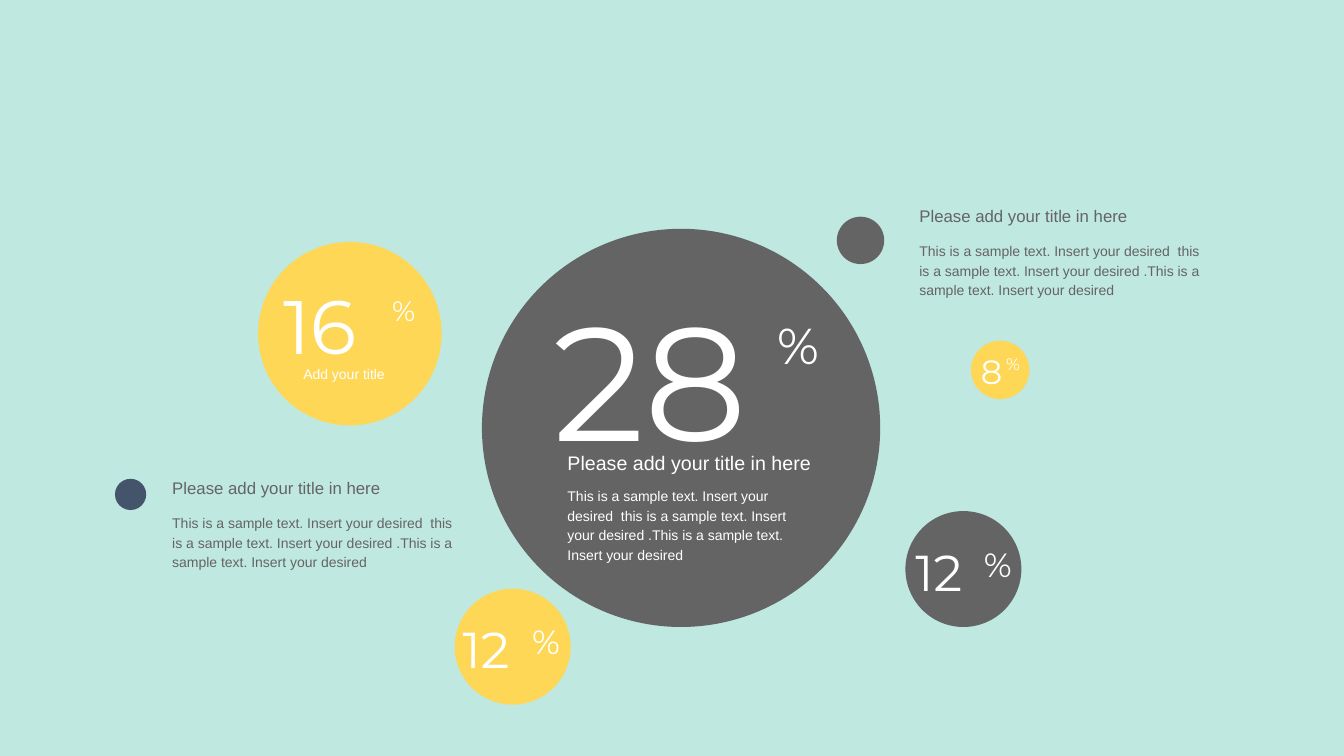
"""Build a slide of percentage bubbles with short text notes."""
from dataclasses import dataclass

from pptx import Presentation
from pptx import util as u
from pptx.dml.color import RGBColor
from pptx.enum import shapes, text

SCALE = 9144


@dataclass(frozen=True)
class Theme:
    mint: str = "BFE8E0"
    grey: str = "646464"
    gold: str = "FED756"
    navy: str = "44546A"
    white: str = "FFFFFF"
    digits: str = "Montserrat"
    prose: str = "Arial"
    huge: int = 115
    large: int = 54
    medium: int = 36
    small: int = 24
    sign: int = 20
    tiny: int = 12
    lead: int = 14
    head: int = 12
    body: int = 10
    leading: int = 14


@dataclass(frozen=True)
class Bubble:
    left: int
    top: int
    size: int
    color: str


@dataclass(frozen=True)
class Label:
    words: str
    left: int
    top: int
    width: int
    height: int
    size: int
    font: str
    color: str
    wrap: bool = False


@dataclass(frozen=True)
class Note:
    left: int
    top: int
    head_width: int
    head_height: int
    body_width: int
    body_height: int
    size: int
    color: str


T = Theme()
TITLE = "Please add your title in here"
SAMPLE = ("This is a sample text. Insert your desired  this is a sample text. "
          "Insert your desired .This is a sample text. Insert your desired")
DROP = 34

BUBBLES = [
    Bubble(898, 507, 115, T.grey),
    Bubble(478, 227, 395, T.grey),
    Bubble(451, 584, 115, T.gold),
    Bubble(256, 240, 182, T.gold),
    Bubble(963, 338, 58, T.gold),
    Bubble(830, 215, 47, T.grey),
    Bubble(114, 475, 31, T.navy),
]

LABELS = [
    Label("28", 539, 273, 235, 204, T.huge, T.digits, T.white),
    Label("%", 761, 307, 71, 71, T.medium, T.digits, T.white),
    Label("16", 271, 272, 121, 101, T.large, T.digits, T.white),
    Label("%", 379, 286, 48, 44, T.sign, T.digits, T.white),
    Label("Add your title", 291, 358, 105, 27, T.body, T.prose, T.white),
    Label("12", 449, 608, 88, 71, T.medium, T.digits, T.white),
    Label("%", 518, 611, 54, 50, T.small, T.digits, T.white),
    Label("12", 898, 532, 88, 71, T.medium, T.digits, T.white),
    Label("%", 966, 535, 54, 50, T.small, T.digits, T.white),
    Label("8", 963, 343, 43, 50, T.small, T.digits, T.white),
    Label("%", 988, 346, 37, 30, T.tiny, T.digits, T.white),
]

NOTES = [
    Note(553, 442, 263, 34, 265, 89, T.lead, T.white),
    Note(902, 199, 228, 30, 302, 69, T.head, T.grey),
    Note(161, 469, 228, 30, 302, 69, T.head, T.grey),
]


def px(count: int) -> u.Emu:
    """Turn px into EMU."""
    return u.Emu(count * SCALE)


def draw_bubble(tree, bubble: Bubble) -> None:
    """Draw one plain circle."""
    disc = tree.add_shape(shapes.MSO_SHAPE.OVAL, px(bubble.left), px(bubble.top),
                          px(bubble.size), px(bubble.size))
    disc.shadow.inherit = False
    disc.fill.solid()
    disc.fill.fore_color.rgb = RGBColor.from_string(bubble.color)
    disc.line.fill.background()


def draw_label(tree, label: Label) -> None:
    """Draw one text box, with fixed leading when it wraps."""
    box = tree.add_textbox(px(label.left), px(label.top), px(label.width), px(label.height))
    frame = box.text_frame
    frame.word_wrap = label.wrap
    frame.auto_size = text.MSO_AUTO_SIZE.SHAPE_TO_FIT_TEXT
    para = frame.paragraphs[0]
    if label.wrap:
        para.line_spacing = u.Pt(T.leading)
    run = para.add_run()
    run.text = label.words
    run.font.name = label.font
    run.font.size = u.Pt(label.size)
    run.font.color.rgb = RGBColor.from_string(label.color)


def draw_note(tree, note: Note) -> None:
    """Draw a heading and its sample text as one group."""
    group = tree.add_group_shape().shapes
    draw_label(group, Label(TITLE, note.left, note.top, note.head_width,
                            note.head_height, note.size, T.prose, note.color))
    draw_label(group, Label(SAMPLE, note.left, note.top + DROP, note.body_width,
                            note.body_height, T.body, T.prose, note.color, True))


def main() -> None:
    """Build and save the slide."""
    deck = Presentation()
    deck.slide_width, deck.slide_height = px(1333), px(750)
    slide = deck.slides.add_slide(deck.slide_layouts[6])
    fill = slide.background.fill
    fill.solid()
    fill.fore_color.rgb = RGBColor.from_string(T.mint)
    for bubble in BUBBLES:
        draw_bubble(slide.shapes, bubble)
    for label in LABELS:
        draw_label(slide.shapes, label)
    for note in NOTES:
        draw_note(slide.shapes, note)
    deck.save("out.pptx")


if __name__ == "__main__":
    main()
